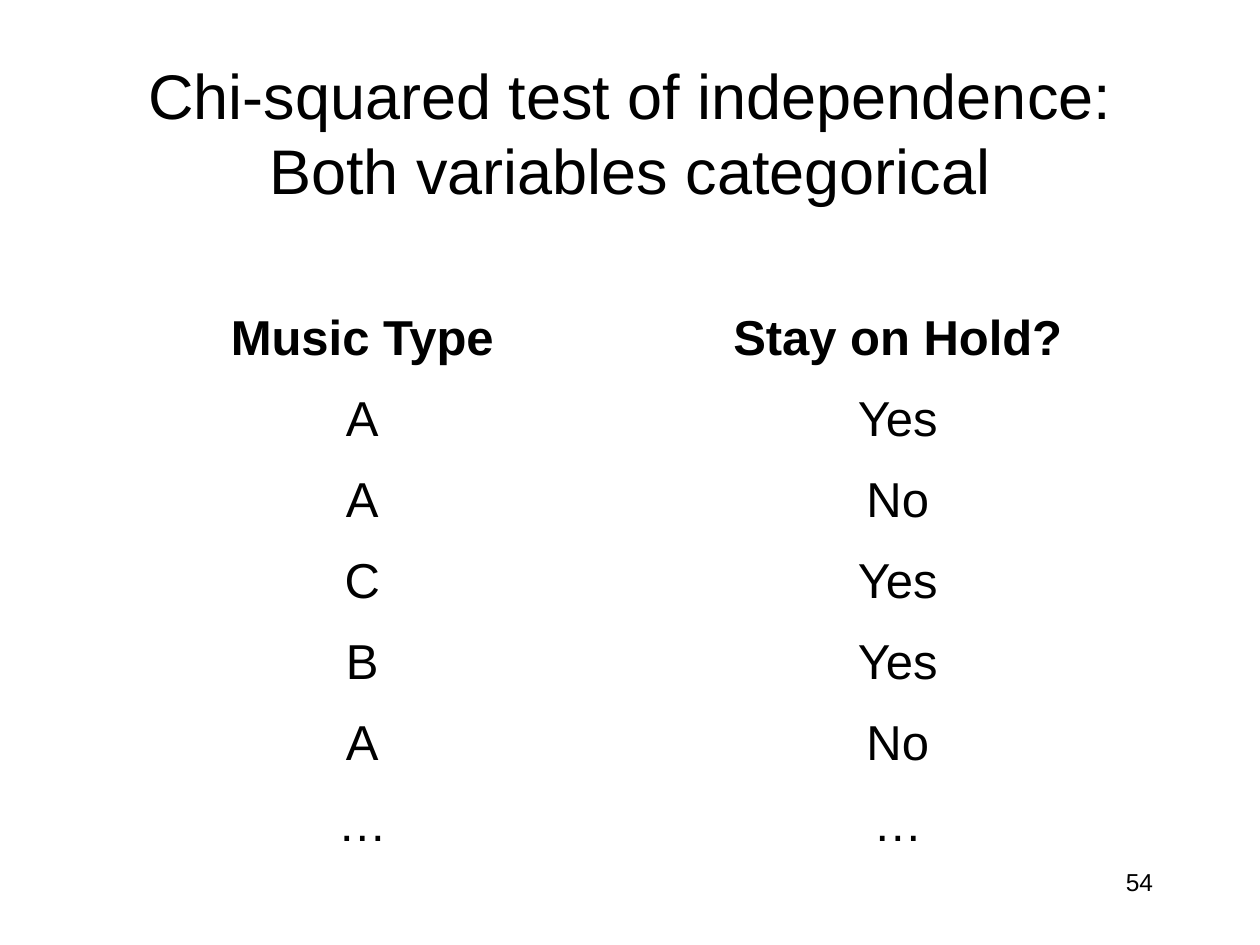
from pptx import Presentation
from pptx.dml.color import RGBColor
from pptx.enum.text import MSO_ANCHOR as Anchor, PP_ALIGN as Align
from pptx.util import Inches, Pt

BLACK = "000000"
TITLE = "Chi-squared test of independence: Both variables categorical"
OBSERVATIONS = [
    ("Music Type", "Stay on Hold?"),
    ("A", "Yes"),
    ("A", "No"),
    ("C", "Yes"),
    ("B", "Yes"),
    ("A", "No"),
    ("…", "…"),
]


def color(hex_value):
    """Turn a hex string into a colour."""
    return RGBColor.from_string(hex_value)


def write(frame, text, size, align, bold=False):
    """Write one formatted run into the first paragraph of a frame."""
    paragraph = frame.paragraphs[0]
    paragraph.alignment = align
    run = paragraph.add_run()
    run.text = text
    run.font.name = "Arial"
    run.font.size = Pt(size)
    run.font.bold = bold
    run.font.color.rgb = color(BLACK)


def add_title(slide):
    """Place and fill the title placeholder."""
    title = slide.shapes.title
    title.left, title.top = Inches(0.75), Inches(0.42)
    title.width, title.height = Inches(8.5), Inches(1.25)
    title.text_frame.vertical_anchor = Anchor.MIDDLE
    write(title.text_frame, TITLE, 36, Align.CENTER)


def add_observations(slide):
    """Add the plain table of paired observations."""
    table = slide.shapes.add_table(
        len(OBSERVATIONS), 2, Inches(0.75), Inches(2.42), Inches(8.5), Inches(4.5)
    ).table
    table.first_row = table.horz_banding = False
    for row, values in enumerate(OBSERVATIONS):
        for column, value in enumerate(values):
            cell = table.cell(row, column)
            cell.fill.background()
            write(cell.text_frame, value, 28, Align.CENTER, bold=row == 0)


def add_page_number(slide):
    """Add the page number at the lower right."""
    page_number = slide.shapes.add_textbox(
        Inches(7.17), Inches(6.83), Inches(2.08), Inches(0.5)
    )
    page_number.text_frame.word_wrap = True
    write(page_number.text_frame, "54", 14, Align.RIGHT)


def main():
    """Build and save the slide."""
    deck = Presentation()
    deck.slide_width, deck.slide_height = Inches(10), Inches(7.5)
    slide = deck.slides.add_slide(deck.slide_layouts[5])
    add_title(slide)
    add_observations(slide)
    add_page_number(slide)
    deck.save("out.pptx")


if __name__ == "__main__":
    main()
